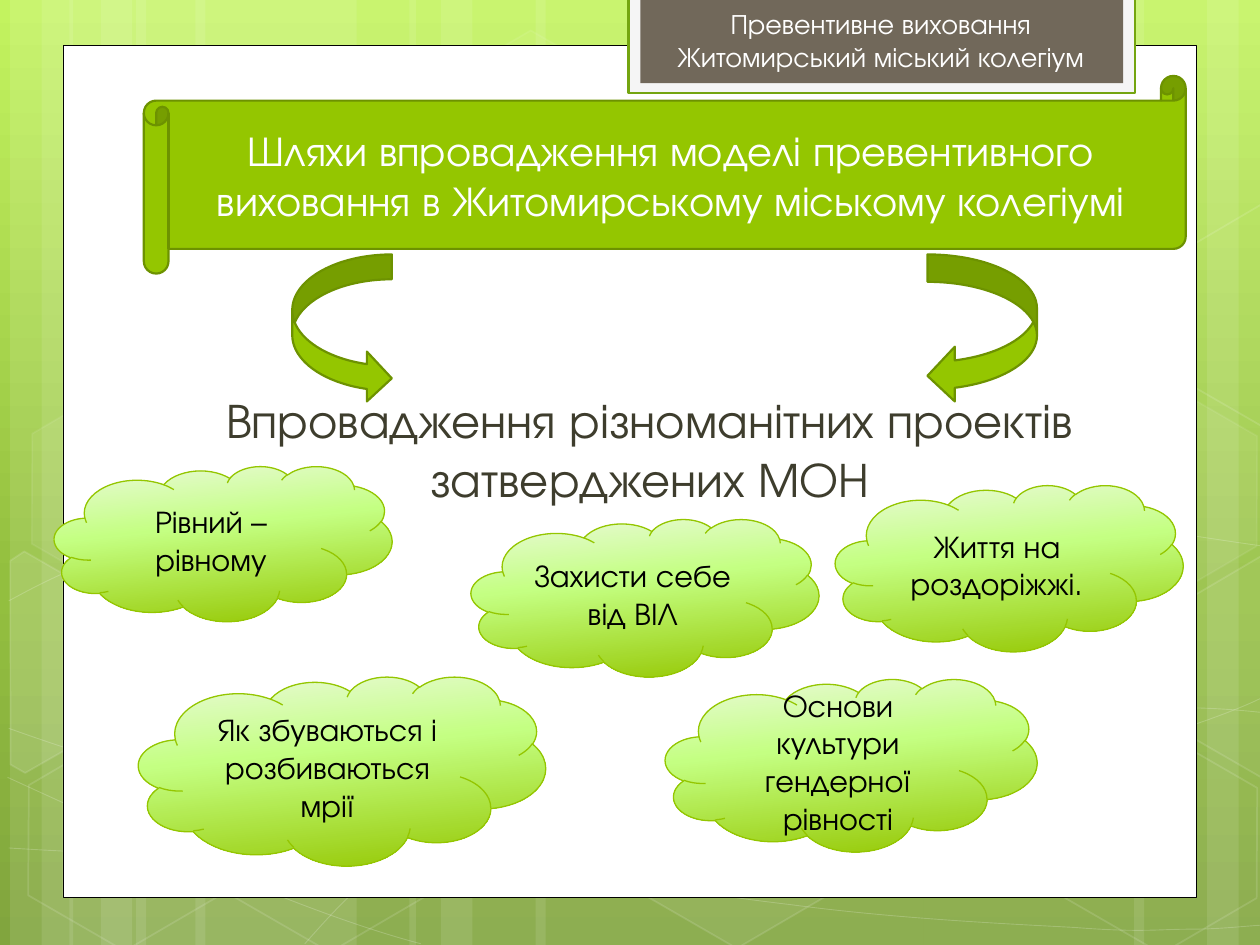
from lxml.etree import SubElement
from pptx import Presentation
from pptx.dml.color import RGBColor
from pptx.enum.shapes import MSO_SHAPE as Preset
from pptx.enum.text import MSO_ANCHOR as Anchor, PP_ALIGN as Align
from pptx.oxml.ns import qn
from pptx.util import Pt

FONT = "TeX Gyre Adventor"
COLORS = {
    "white": "FFFFFF", "black": "000000", "body": "3E3D2D",
    "green": "94C600", "dark green": "6D9200",
    "tab": "F5F5F5", "tab line": "74A510", "tab inner": "71685A",
}
BACKDROP = [(0, "C3F35F"), (62, "93BF3F"), (100, "81A53E")]
CLOUD_FILL = [(0, "EAF9DA"), (40, "C4FF82"), (100, "94C600")]

HEADER = ["Превентивне виховання", "Житомирський міський колегіум"]
TITLE = ["Шляхи впровадження моделі превентивного виховання "
         "в Житомирському міському колегіумі"]
SUBTITLE = ["Впровадження різноманітних проектів затверджених МОН"]
# text, (left, top, width, height)
PROJECTS = [
    ("Рівний – рівному", (31, 266.4, 193, 88.6)),
    ("Як збуваються і розбиваються мрії", (79.2, 386.6, 232.6, 108)),
    ("Життя на роздоріжжі.", (477.4, 277.2, 198.7, 95)),
    ("Захисти себе від ВІЛ", (269.3, 296.6, 198.7, 90)),
    ("Основи культури гендерної рівності", (380.2, 388, 212.4, 98.6)),
]
ARROWS = [(Preset.CURVED_LEFT_ARROW, (530, 145.4, 62.6, 85)),
          (Preset.CURVED_RIGHT_ARROW, (167, 145.4, 56.9, 85))]

# left, width, rotation of the full-height light bands
STRIPES = [(77.8, 126, 0), (5.8, 36, 0), (23.8, 59.8, 0), (111.6, 126, 0),
           (39.6, 36, 0), (57.6, 59.8, 0), (527.8, 126, 180), (689.8, 36, 180),
           (648, 59.8, 180), (306, 221.8, 0), (234, 36, 0), (252, 59.8, 0)]
# start point, then three points (control, control, end) for each cubic segment
CURVES = [
    [(5, 484.6), (44, 487), (83, 489), (137, 488), (191, 487), (258, 486), (330, 479),
     (402, 472), (504, 458), (570, 444), (636, 431), (703, 409), (725, 396.7)],
    [(5, 343.4), (26, 332), (47, 321), (87, 310), (128, 300), (186, 284), (250, 279),
     (314, 274), (392, 273), (471, 279), (550, 284), (682, 307), (725, 312.5)],
    [(4.3, 444.2), (91, 484), (178, 523), (240.5, 539.3)],
    [(5, 416.2), (27, 424), (50, 432), (92, 443.5), (134, 454), (197, 472), (257, 484.6),
     (317, 497), (392, 510), (452, 517), (512, 525), (576, 528), (614, 530),
     (652, 533), (662, 531), (680, 531), (699, 531), (712, 529), (725, 528.5)],
    [(174.2, 539.3), (187, 525), (200, 510), (217.4, 497.5),
     (235, 485), (259, 470), (279.4, 460), (300, 450), (312, 446), (338.4, 438.5),
     (364, 431), (413, 421), (437.8, 416.2), (464, 411), (467, 411), (489.6, 409.7),
     (512, 407.5), (547, 405.4), (571.7, 404.6), (597, 404), (617, 404.6), (638, 404.6),
     (654, 404.6), (670, 404.6), (686, 404.6), (699, 405), (711, 406), (724.3, 407.5)],
]
HEX_SIZE = (126, 109.4)
HEX_TURN = 30
# left, top, fill opacity (None: no fill), line opacity
HEXAGONS = [(240.5, 26, 4, 8), (357.8, 424, 6, 12), (8, 425.5, None, 12),
            (10, 224.6, 7, 8), (125.3, 426.2, None, 12), (542.2, 326.2, 10, 12),
            (600.5, 427, None, 12), (600.5, 226, 7, 8)]
# Corners before the turn, relative to left and top
LEFT_CUT = [(0, 8.6), (4.3, 0), (68, 0), (99.4, 55.4), (68, 109.4), (58.3, 109.4)]
RIGHT_CUT = [(0, 54), (30.6, 0), (37.3, 0), (97.9, 104), (94.3, 109.4), (31, 109.4)]
# left, top, corners, fill opacity
CUT_HEXAGONS = [(-23.8, 330.5, LEFT_CUT, 10), (660.2, 319.7, RIGHT_CUT, 4),
                (660.2, 118.8, RIGHT_CUT, None)]

prs = Presentation()
prs.slide_width, prs.slide_height = Pt(720), Pt(540)
slide = prs.slides.add_slide(prs.slide_layouts[6])


def paint(fill, color, opacity=100):
    fill.solid()
    fill.fore_color.rgb = RGBColor.from_string(COLORS[color])
    if opacity < 100:
        rgb = fill._xPr.find(".//" + qn("a:srgbClr"))
        SubElement(rgb, qn("a:alpha"), val=str(opacity * 1000))


def paint_gradient(fill, stops, clockwise):
    fill.gradient()
    fill.gradient_angle = 360 - clockwise
    stop_list = fill._xPr.find(".//" + qn("a:gsLst"))
    for old in list(stop_list):
        stop_list.remove(old)
    for percent, color in stops:
        stop = SubElement(stop_list, qn("a:gs"), pos=str(percent * 1000))
        SubElement(stop, qn("a:srgbClr"), val=color)


def style(shape, fill=None, opacity=100, line=None, weight=1, line_opacity=100, turn=0):
    """Fill may be a colour name, a list of gradient stops or None."""
    shape.shadow.inherit = False
    shape.rotation = turn
    if fill is None:
        shape.fill.background()
    elif isinstance(fill, list):
        paint_gradient(shape.fill, fill, 84)
    else:
        paint(shape.fill, fill, opacity)
    if line:
        shape.line.width = Pt(weight)
        paint(shape.line.fill, line, line_opacity)
    else:
        shape.line.fill.background()
    return shape


def add_preset(preset, box, **look):
    return style(slide.shapes.add_shape(preset, *map(Pt, box)), **look)


def add_outline(points, closed, **look):
    start, *rest = [(Pt(x), Pt(y)) for x, y in points]
    builder = slide.shapes.build_freeform(*start)
    builder.add_line_segments(rest, close=closed)
    return style(builder.convert_to_shape(), **look)


def bend(outline):
    """Turn each three line segments into one cubic Bezier segment."""
    outline_path = outline._element.find(".//" + qn("a:path"))
    lines = outline_path.findall(qn("a:lnTo"))
    for i in range(0, len(lines), 3):
        cubic = SubElement(outline_path, qn("a:cubicBezTo"))
        for line in lines[i:i + 3]:
            cubic.append(line[0])
            outline_path.remove(line)


def write(shape, lines, size, color, anchor=Anchor.MIDDLE, top=3.6, left=7.2):
    frame = shape.text_frame
    frame.word_wrap = True
    frame.vertical_anchor = anchor
    frame.margin_top, frame.margin_left = Pt(top), Pt(left)
    for i, line in enumerate(lines):
        paragraph = frame.add_paragraph() if i else frame.paragraphs[0]
        paragraph.alignment = Align.CENTER
        run = paragraph.add_run()
        run.text = line
        run.font.name, run.font.size = FONT, Pt(size)
        run.font.color.rgb = RGBColor.from_string(COLORS[color])


def add_label(box, lines, size, color, **margins):
    label = slide.shapes.add_textbox(*map(Pt, box))
    write(label, lines, size, color, Anchor.TOP, **margins)


# Backdrop
paint_gradient(slide.background.fill, BACKDROP, 90)
for left, width, turn in STRIPES:
    add_preset(Preset.RECTANGLE, (left, 0, width, 540), fill="white", opacity=10, turn=turn)
for curve in CURVES:
    bend(add_outline(curve, False, line="white", weight=0.5, line_opacity=20))
for left, top, opacity, line_opacity in HEXAGONS:
    hexagon = add_preset(Preset.HEXAGON, (left, top, *HEX_SIZE),
                         fill="white" if opacity else None, opacity=opacity,
                         line="white", line_opacity=line_opacity, turn=HEX_TURN)
    hexagon.adjustments[0] = 0.285
for left, top, corners, opacity in CUT_HEXAGONS:
    add_outline([(left + x, top + y) for x, y in corners], True,
                fill="white" if opacity else None, opacity=opacity,
                line="white", line_opacity=12, turn=HEX_TURN)

# Page and header tab
add_preset(Preset.RECTANGLE, (36, 26, 648, 487), fill="white", line="black", weight=0.5)
add_preset(Preset.RECTANGLE, (359.1, -1.5, 289.4, 54.7),
           fill="tab", line="tab line", weight=1.25)
add_preset(Preset.RECTANGLE, (366, -1.5, 275.8, 49), fill="tab inner")

# Content
add_label((42.5, 140.4, 652.3, 361.4), SUBTITLE, 28, "body", top=82.3, left=12.4)
scroll = add_preset(Preset.HORIZONTAL_SCROLL, (82.2, 43.4, 595.4, 113),
                    fill="green", line="dark green", weight=1.25)
write(scroll, TITLE, 24, "white")
for preset, box in ARROWS:
    add_preset(preset, box, fill="green", line="dark green", weight=1.25)
for project, box in PROJECTS:
    cloud = add_preset(Preset.CLOUD, box, fill=CLOUD_FILL, line="green", weight=0.75)
    write(cloud, [project], 18, "black")
add_label((360, 0, 286.6, 46), HEADER, 16, "white")

prs.save("out.pptx")
